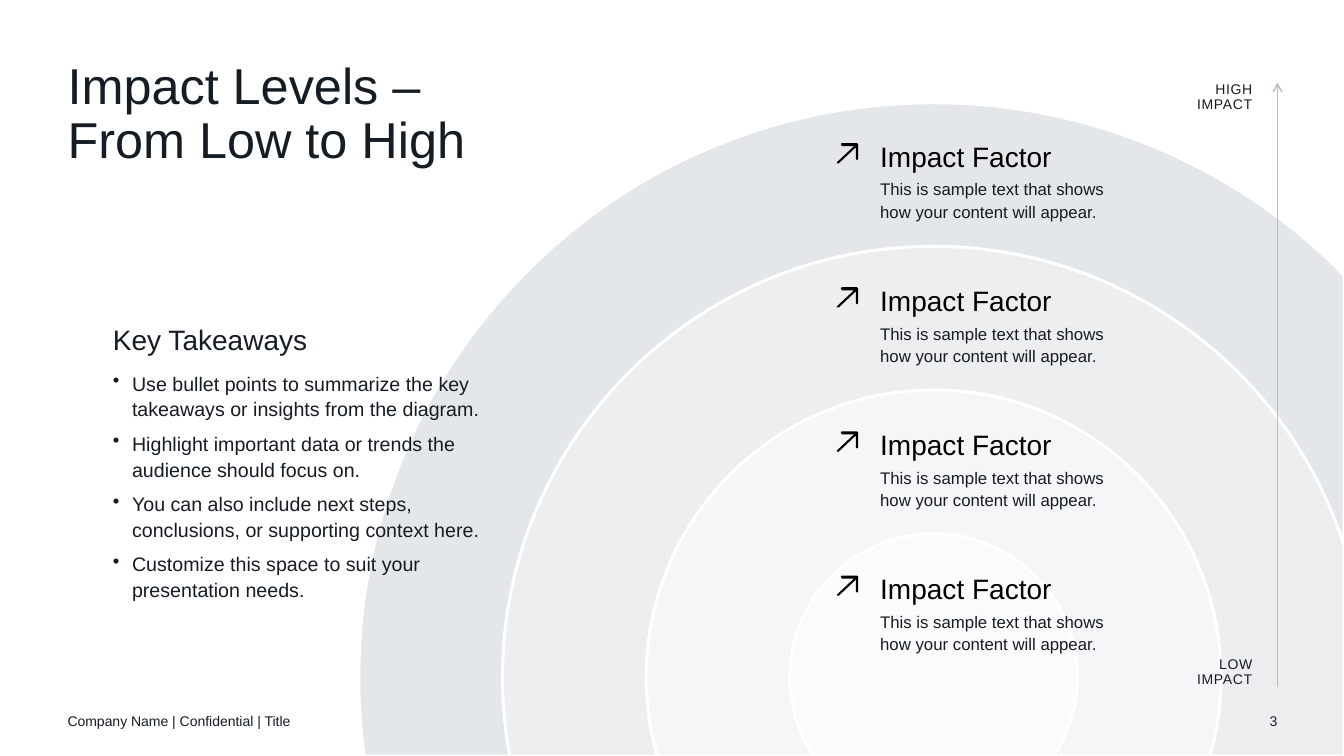
from dataclasses import dataclass, field
from itertools import pairwise
from math import acos, asin, cos, pi, sin, tan
from typing import Any

from lxml.etree import SubElement
from pptx import Presentation
from pptx.dml.color import RGBColor
from pptx.enum.shapes import MSO_CONNECTOR
from pptx.enum.text import MSO_ANCHOR, MSO_AUTO_SIZE, PP_ALIGN
from pptx.oxml.ns import qn
from pptx.util import Inches, Pt


@dataclass(frozen=True)
class Theme:
    font: str = "Arial"
    ink: str = "151C23"
    black: str = "000000"
    white: str = "FFFFFF"
    slate: str = "4E5E73"
    axis: str = "B3BECC"
    title: int = 36
    head: int = 20
    bullet: int = 14
    body: int = 12
    small: int = 10


THEME = Theme()
WIDE, HIGH = 13.33, 7.5
MID_X, MID_Y, STEP = 9.26, 6.72, 1.425
ALPHAS = (2, 5, 10, 15)
TOP, PITCH = 1.35, 1.43
ICON = ((0.2, 0), (0.21, 0.01), (0.21, 0.16), (0.2, 0.17), (0.19, 0.16), (0.19, 0.04),
        (0.02, 0.2), (0, 0.2), (0, 0.19), (0.17, 0.03), (0.05, 0.03), (0.04, 0.01), (0.05, 0))


@dataclass
class Node:
    x: float
    y: float
    bend: tuple[tuple[float, float], ...] = ()


@dataclass
class Para:
    text: str
    size: int
    color: str = THEME.ink
    bullet: bool = False
    track: int = 0
    form: dict[str, Any] = field(default_factory=dict)


@dataclass
class Box:
    left: float
    top: float
    width: float
    height: float
    paras: list[Para]
    form: dict[str, Any] = field(default_factory=dict)


def apply(target: Any, form: dict[str, Any]) -> None:
    for name, value in form.items():
        setattr(target, name, value)


def place(shape: Any, box: Box) -> None:
    apply(shape, {"left": Inches(box.left), "top": Inches(box.top),
                  "width": Inches(box.width), "height": Inches(box.height)})
    frame = shape.text_frame
    margins = dict.fromkeys(("margin_left", "margin_top", "margin_right", "margin_bottom"), 0)
    apply(frame, {"word_wrap": True, "auto_size": MSO_AUTO_SIZE.NONE,
                  "vertical_anchor": MSO_ANCHOR.TOP, **margins, **box.form})
    for index, para in enumerate(box.paras):
        line = frame.paragraphs[0] if index == 0 else frame.add_paragraph()
        apply(line, para.form)
        if para.bullet:
            props = line._p.get_or_add_pPr()
            props.set("marL", str(Inches(0.19)))
            props.set("indent", str(-Inches(0.19)))
            SubElement(props, qn("a:buChar"), char="•")
        for part, words in enumerate(para.text.split("\n")):
            if part:
                line.add_line_break()
            run = line.add_run()
            run.text = words
            apply(run.font, {"name": THEME.font, "size": Pt(para.size)})
            run.font.color.rgb = RGBColor.from_string(para.color)
            if para.track:
                run._r.get_or_add_rPr().set("spc", str(para.track))


def write(shapes: Any, box: Box) -> None:
    place(shapes.add_textbox(0, 0, 0, 0), box)


def trace(shapes: Any, nodes: list[Node], color: str) -> Any:
    spots = [(Inches(node.x), Inches(node.y)) for node in nodes]
    draft = shapes.build_freeform(*spots[0], scale=1.0)
    draft.add_line_segments(spots[1:], close=True)
    shape = draft.convert_to_shape()
    for edge, node in zip(list(shape.element.iter(qn("a:lnTo"))), nodes[1:]):
        if node.bend:
            edge.tag = qn("a:cubicBezTo")
            for index, (x, y) in enumerate(node.bend):
                spot = SubElement(edge, qn("a:pt"), x=str(Inches(x) - shape.left),
                                  y=str(Inches(y) - shape.top))
                edge.insert(index, spot)
    shape.shadow.inherit = False
    shape.fill.solid()
    shape.fill.fore_color.rgb = RGBColor.from_string(color)
    shape.line.fill.background()
    return shape


def arc(radius: float, back: bool = False) -> list[Node]:
    dip = asin((HIGH - MID_Y) / radius)
    reach = WIDE - MID_X
    turns = [pi + dip, pi, pi / 2]
    turns += [acos(reach / radius)] if radius > reach else [0, -dip]
    if back:
        turns.reverse()

    def spot(turn: float, pull: float = 0) -> tuple[float, float]:
        return (MID_X + radius * (cos(turn) - pull * sin(turn)),
                MID_Y - radius * (sin(turn) + pull * cos(turn)))

    nodes = [Node(*spot(turns[0]))]
    for start, end in pairwise(turns):
        pull = 4 / 3 * tan((end - start) / 4)
        nodes.append(Node(*spot(end), (spot(start, pull), spot(end, -pull))))
    return nodes


def ring(shapes: Any, level: int, alpha: int) -> None:
    outer = arc(level * STEP)
    inner = arc((level - 1) * STEP, back=True) if level > 1 else []
    leaves = outer[-1].y < HIGH - 0.01
    lands = bool(inner) and inner[0].y > HIGH - 0.01
    corner = [Node(WIDE, HIGH)] if leaves and lands else []
    shape = trace(shapes, outer + corner + inner, THEME.slate)
    tint = next(shape.element.spPr.iter(qn("a:srgbClr")))
    SubElement(tint, qn("a:alpha"), val=str(alpha * 1000))
    shape.line.color.rgb = RGBColor.from_string(THEME.white)
    shape.line.width = Pt(2)


def axis(shapes: Any) -> None:
    line = shapes.add_connector(MSO_CONNECTOR.STRAIGHT, Inches(12.67), Inches(6.82),
                                Inches(12.67), Inches(0.82))
    line.line.color.rgb = RGBColor.from_string(THEME.axis)
    line.line.width = Pt(1)
    SubElement(line.line._get_or_add_ln(), qn("a:tailEnd"), type="arrow")
    SubElement(line.element.spPr, qn("a:effectLst"))


def main() -> None:
    deck = Presentation()
    apply(deck, {"slide_width": Inches(WIDE), "slide_height": Inches(HIGH)})
    shapes = deck.slides.add_slide(deck.slide_layouts[5]).shapes
    grow = {"auto_size": MSO_AUTO_SIZE.SHAPE_TO_FIT_TEXT}
    centre = {"vertical_anchor": MSO_ANCHOR.MIDDLE}
    right = {"alignment": PP_ALIGN.RIGHT}

    write(shapes, Box(12.17, 6.95, 0.5, 0.4, [Para("3", THEME.small, form=right)], centre))
    write(shapes, Box(0.67, 6.95, 4.5, 0.4,
                      [Para("Company Name | Confidential | Title", THEME.small)], centre))

    group = shapes.add_group_shape()
    for level in range(len(ALPHAS), 0, -1):
        ring(group.shapes, level, ALPHAS[level - 1])

    axis(shapes)
    for top, word in ((0.82, "HIGH"), (6.52, "LOW")):
        lines = [Para(text, THEME.small, track=50, form={**right, "line_spacing": 0.9})
                 for text in (word, "IMPACT")]
        write(shapes, Box(11.67, top, 0.75, 0.3, lines, grow))

    loose = {"line_spacing": 1.1}
    head = {**loose, "space_after": Pt(3)}
    for row in range(len(ALPHAS)):
        top = TOP + row * PITCH
        write(shapes, Box(8.73, top, 2.5, 0.9, [
            Para("Impact Factor", THEME.head, THEME.black, form=head),
            Para("This is sample text that shows how your content will appear.",
                 THEME.body, form=loose)], grow))
        trace(shapes, [Node(8.3 + x, top + 0.07 + y) for x, y in ICON], THEME.black)

    notes = ("Use bullet points to summarize the key takeaways or insights from the diagram.",
             "Highlight important data or trends the audience should focus on.",
             "You can also include next steps, conclusions, or supporting context here.",
             "Customize this space to suit your presentation needs.")
    items = [Para(text, THEME.bullet, bullet=True, form={**loose, "space_before": Pt(6)})
             for text in notes]
    write(shapes, Box(1.12, 3.17, 4.04, 3.2,
                      [Para("Key Takeaways", THEME.head, form=head), *items]))

    title = shapes.title
    place(title, Box(0.67, 0.6, 12, 0.6, [
        Para("Impact Levels – \nFrom Low to High", THEME.title,
             form={"alignment": PP_ALIGN.LEFT, "line_spacing": 0.9, "space_before": Pt(0)})]))
    title.element.getparent().append(title.element)
    deck.save("out.pptx")


if __name__ == "__main__":
    main()
